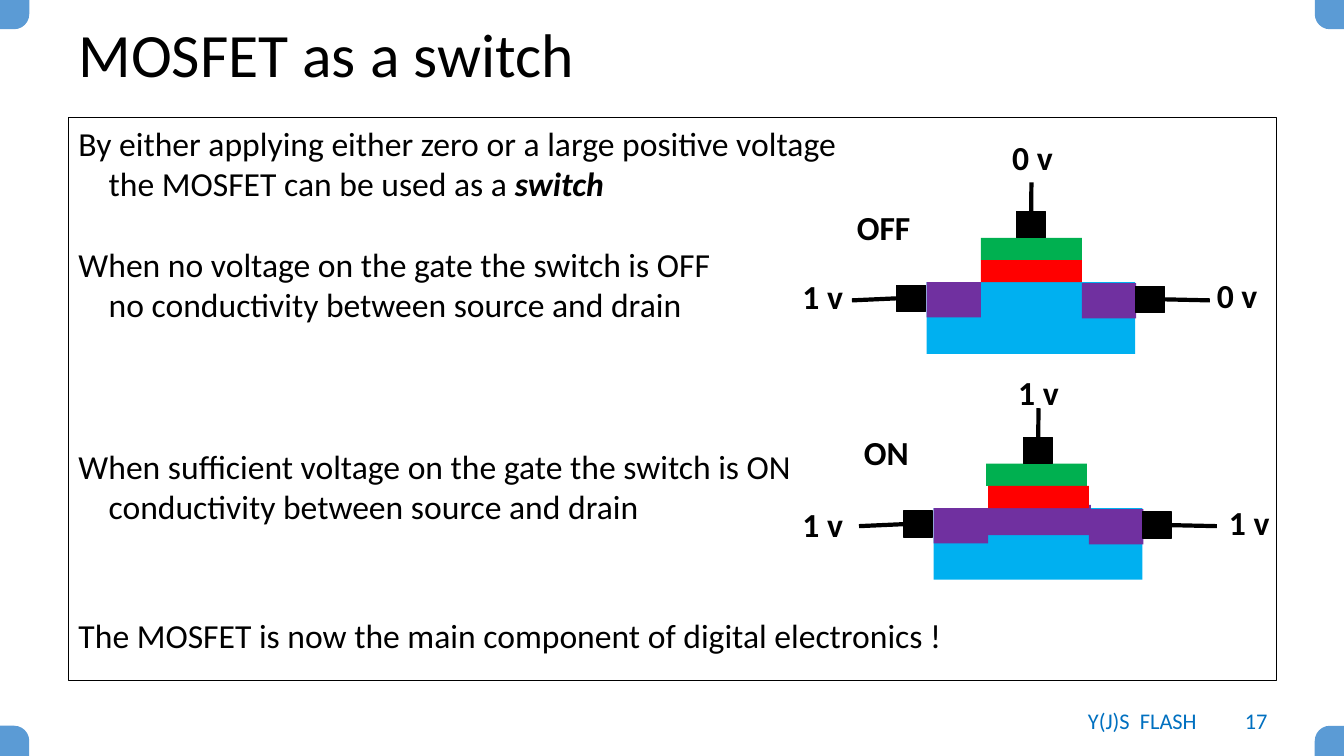
from pptx import Presentation
from pptx.dml.color import RGBColor
from pptx.enum.shapes import MSO_CONNECTOR, MSO_SHAPE
from pptx.enum.text import MSO_ANCHOR, MSO_AUTO_SIZE, PP_ALIGN
from pptx.oxml.ns import qn
from pptx.util import Inches, Pt
from lxml import etree

FONT = "Calibri"
BLACK = RGBColor(0x00, 0x00, 0x00)
CORNER_BLUE = RGBColor(0x5B, 0x9B, 0xD5)
FOOTER_BLUE = RGBColor(0x00, 0x70, 0xC0)
GATE_GREEN = RGBColor(0x00, 0xB0, 0x50)
OXIDE_RED = RGBColor(0xFF, 0x00, 0x00)
BULK_BLUE = RGBColor(0x00, 0xB0, 0xF0)
DOPED_PURPLE = RGBColor(0x70, 0x30, 0xA0)

LINE_PITCH = 28.8
# Each line: spans as (text, emphasised), indented, space before in points
BODY_LINES = [
    ([("By either applying either zero or a large positive voltage", False)], False, 0),
    ([("the MOSFET can be used as a ", False), ("switch", True)], True, 0),
    ([("When no voltage on the gate the switch is OFF", False)], False, LINE_PITCH),
    ([("no conductivity between source and drain", False)], True, 0),
    ([("When sufficient voltage on the gate the switch is ON", False)], False, 3 * LINE_PITCH),
    ([("conductivity between source and drain", False)], True, 0),
    ([("The MOSFET is now the main component of digital electronics !", False)],
     False, 2 * LINE_PITCH + 6),
]


def style_span(span, size, color=BLACK, bold=False, italic=False):
    span.font.name = FONT
    span.font.size = Pt(size)
    span.font.color.rgb = color
    span.font.bold = bold
    span.font.italic = italic


def add_block(shapes, left, top, width, height, fill=None, line=None,
              line_width=1, kind=MSO_SHAPE.RECTANGLE):
    block = shapes.add_shape(kind, Inches(left), Inches(top), Inches(width), Inches(height))
    block.shadow.inherit = False
    if fill is None:
        block.fill.background()
    else:
        block.fill.solid()
        block.fill.fore_color.rgb = fill
    if line is None:
        block.line.fill.background()
    else:
        block.line.color.rgb = line
        block.line.width = Pt(line_width)
    return block


def add_text(shapes, text, left, top, width, height, size, color=BLACK,
             align=PP_ALIGN.LEFT, bold=False, anchor=MSO_ANCHOR.MIDDLE):
    box = shapes.add_textbox(Inches(left), Inches(top), Inches(width), Inches(height))
    frame = box.text_frame
    frame.word_wrap = True
    frame.vertical_anchor = anchor
    frame.text = text
    para = frame.paragraphs[0]
    para.alignment = align
    style_span(para.runs[0], size, color, bold)
    return box


def add_label(shapes, text, left, top, width, align=PP_ALIGN.CENTER):
    box = add_text(shapes, text, left, top, width, 0.5, 24, align=align,
                   bold=True, anchor=MSO_ANCHOR.TOP)
    box.text_frame.auto_size = MSO_AUTO_SIZE.SHAPE_TO_FIT_TEXT


def add_wire(shapes, contact, side, start, end):
    """Draw a wire that leaves the contact from the given side."""
    wire = shapes.add_connector(MSO_CONNECTOR.STRAIGHT, Inches(start[0]), Inches(start[1]),
                                Inches(end[0]), Inches(end[1]))
    wire.begin_connect(contact, side)
    wire.line.color.rgb = BLACK
    wire.line.width = Pt(3)
    etree.SubElement(wire._element.spPr, qn("a:effectLst"))


def add_corners(page):
    for left, top, turn in [(-0.01, -0.01, 90), (13.04, -0.01, 180),
                            (13.04, 7.2, 270), (-0.01, 7.2, 0)]:
        corner = add_block(page.shapes, left, top, 0.3, 0.3, CORNER_BLUE,
                           kind=MSO_SHAPE.ROUND_1_RECTANGLE)
        corner.adjustments[0] = 0.5
        corner.rotation = turn


def add_body(page):
    panel = add_block(page.shapes, 0.68, 1.17, 11.98, 5.58, line=BLACK, line_width=0.75)
    frame = panel.text_frame
    frame.word_wrap = True
    frame.vertical_anchor = MSO_ANCHOR.TOP
    for index, (spans, indented, space) in enumerate(BODY_LINES):
        para = frame.paragraphs[0] if index == 0 else frame.add_paragraph()
        para.alignment = PP_ALIGN.LEFT
        para.line_spacing = Pt(LINE_PITCH)
        para.space_before = Pt(space)
        if indented:
            para._p.get_or_add_pPr().set("marL", str(Inches(0.3)))
        for text, emphasised in spans:
            span = para.add_run()
            span.text = text
            style_span(span, 24, bold=emphasised, italic=emphasised)


def add_transistor(page, left, top, state, gate, source, drain, conducting=False):
    """left, top: corner of the bulk; gate, source, drain: label text, left, top."""
    shapes = page.shapes.add_group_shape().shapes

    # Bulk, doped regions and gate stack
    add_block(shapes, left, top, 2.07, 0.71, BULK_BLUE)
    add_block(shapes, left, top, 0.54, 0.35, DOPED_PURPLE)
    add_block(shapes, left + 1.54, top + 0.01, 0.54, 0.35, DOPED_PURPLE)
    if conducting:
        add_block(shapes, left + 0.54, top - 0.03, 1.02, 0.3, DOPED_PURPLE)
    gate_left = left + (0.52 if conducting else 0.54)
    add_block(shapes, gate_left, top - 0.44, 1, 0.22, GATE_GREEN)
    add_block(shapes, left + 0.54, top - 0.22, 1, 0.22, OXIDE_RED)

    # Contacts with wires: contact offset, side, wire start and end offsets
    for place, side, start, end in [
        ((0.89, -0.7), 2, (1.04, -0.44), (1.04, -0.99)),
        ((-0.3, 0.03), 1, (-0.3, 0.16), (-0.74, 0.18)),
        ((2.07, 0.04), 3, (2.36, 0.17), (2.81, 0.18)),
    ]:
        contact = add_block(shapes, left + place[0], top + place[1], 0.29, 0.26, BLACK, BLACK)
        add_wire(shapes, contact, side, (left + start[0], top + start[1]),
                 (left + end[0], top + end[1]))

    # Voltages and state
    add_label(shapes, *gate, 0.86)
    add_label(shapes, *source, 0.64)
    add_label(shapes, *drain, 0.64)
    add_label(shapes, state, left - 0.79, top - 0.8, 0.75, PP_ALIGN.LEFT)


def main():
    deck = Presentation()
    deck.slide_width = Inches(13.33)
    deck.slide_height = Inches(7.5)
    page = deck.slides.add_slide(deck.slide_layouts[6])

    # Frame, title and text
    add_corners(page)
    title = add_text(page.shapes, "MOSFET as a switch", 0.68, 0.21, 11.98, 0.72, 44)
    title.text_frame.paragraphs[0].line_spacing = 0.9
    add_body(page)

    # Footer
    add_text(page.shapes, "Y(J)S  FLASH", 10.58, 6.95, 1.5, 0.4, 16, FOOTER_BLUE,
             PP_ALIGN.CENTER)
    add_text(page.shapes, "17", 11.99, 6.95, 0.68, 0.4, 16, FOOTER_BLUE, PP_ALIGN.RIGHT)

    # Switch off and on
    add_transistor(page, 9.19, 2.8, "OFF", ("0 v", 9.81, 1.31), ("1 v", 7.84, 2.69),
                   ("0 v", 11.95, 2.68))
    add_transistor(page, 9.26, 5.04, "ON", ("1 v", 9.87, 3.64), ("1 v", 7.84, 4.95),
                   ("1 v", 12.07, 4.93), conducting=True)

    deck.save("out.pptx")


if __name__ == "__main__":
    main()
